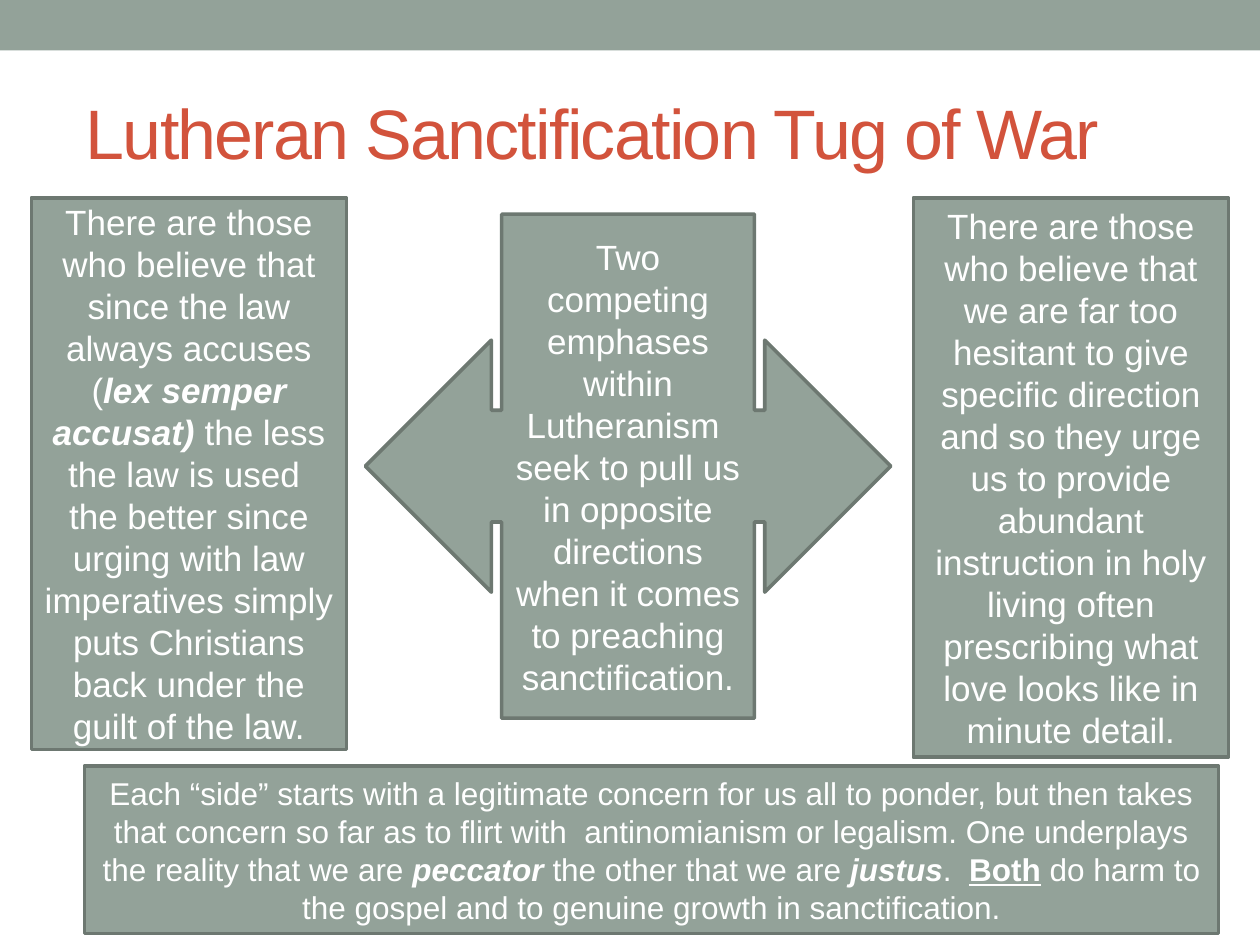
import pptx
import pptx.dml.color
import pptx.enum.shapes
import pptx.enum.text
import pptx.util
from dataclasses import dataclass

Inches = pptx.util.Inches
Pt = pptx.util.Pt
MSO_SHAPE = pptx.enum.shapes.MSO_SHAPE
PP_ALIGN = pptx.enum.text.PP_ALIGN
MSO_ANCHOR = pptx.enum.text.MSO_ANCHOR


def color(value):
    return pptx.dml.color.RGBColor.from_string(value)


@dataclass(frozen=True)
class Theme:
    font: str = "Arial"
    sage = color("93A299")
    outline = color("6D7871")
    white = color("FFFFFF")
    heading = color("D2533C")
    title_size = Pt(40)
    body_size = Pt(20)
    summary_size = Pt(18)
    line_width = Pt(2.08)


theme = Theme()


def add_panel(page, kind, bounds, paragraphs, size):
    """Add an outlined shape; each paragraph is a list of (text, styles) spans,
    where styles is any mix of the letters b, i and u."""
    panel = page.shapes.add_shape(kind, *[Inches(value) for value in bounds])
    panel.shadow.inherit = False
    panel.fill.solid()
    panel.fill.fore_color.rgb = theme.sage
    panel.line.color.rgb = theme.outline
    panel.line.width = theme.line_width
    frame = panel.text_frame
    frame.word_wrap = True
    frame.vertical_anchor = MSO_ANCHOR.MIDDLE
    for index, spans in enumerate(paragraphs):
        para = frame.add_paragraph() if index else frame.paragraphs[0]
        para.alignment = PP_ALIGN.CENTER
        para.font.name = theme.font
        para.font.size = size
        para.font.color.rgb = theme.white
        for text, styles in spans:
            span = para.add_run()
            span.text = text
            if "b" in styles:
                span.font.bold = True
            if "i" in styles:
                span.font.italic = True
            if "u" in styles:
                span.font.underline = True
    return panel


deck = pptx.Presentation()
deck.slide_width = Inches(10)
deck.slide_height = Inches(7.5)
page = deck.slides.add_slide(deck.slide_layouts[5])

# Top band
band = page.shapes.add_shape(MSO_SHAPE.RECTANGLE, 0, 0, deck.slide_width, Inches(0.4))
band.shadow.inherit = False
band.fill.solid()
band.fill.fore_color.rgb = theme.sage
band.line.fill.background()

# Title
title = page.shapes.title
title.left, title.top = Inches(0.58), Inches(0.5)
title.width, title.height = Inches(9), Inches(1.08)
title.text_frame.text = "Lutheran Sanctification Tug of War"
title.text_frame.auto_size = pptx.enum.text.MSO_AUTO_SIZE.NONE
title.text_frame.vertical_anchor = MSO_ANCHOR.MIDDLE
heading = title.text_frame.paragraphs[0]
heading.alignment = PP_ALIGN.LEFT
heading.font.name = theme.font
heading.font.size = theme.title_size
heading.font.color.rgb = theme.heading
heading.runs[0].font._element.set("spc", "-100")

# Central two-way arrow
callout = add_panel(
    page, MSO_SHAPE.LEFT_RIGHT_ARROW_CALLOUT, (2.9, 1.7, 4.17, 4),
    [[("Two competing emphases within Lutheranism  seek to pull us in opposite "
       "directions when it comes to preaching sanctification.", "")]],
    theme.body_size)
for index, value in enumerate((0.222, 0.25, 0.25, 0.481)):
    callout.adjustments[index] = value

# The two sides
less_law = [
    [("There are those who believe that since the law always accuses (", ""),
     ("lex semper accusat)", "bi"),
     (" the less the law is used ", "")],
    [("the better since urging with law imperatives simply puts Christians "
      "back under the guilt of the law.", "")],
]
more_direction = [
    [("There are those who believe that we are far too hesitant to give specific "
      "direction and so they urge us to provide abundant instruction in holy "
      "living often prescribing what love looks like in minute detail.", "")],
]
for left, height, paragraphs in ((0.25, 4.38, less_law), (7.25, 4.44, more_direction)):
    add_panel(page, MSO_SHAPE.RECTANGLE, (left, 1.57, 2.5, height),
              paragraphs, theme.body_size)

# Summary
summary = [
    [("Each “side” starts with a legitimate concern for us all to ponder, but then "
      "takes that concern so far as to flirt with  antinomianism or legalism. "
      "One underplays the reality that we are ", ""),
     ("peccator", "bi"),
     (" the other that we are ", ""),
     ("justus", "bi"),
     (".  ", ""),
     ("Both", "bu"),
     (" do harm to the gospel and to genuine growth in sanctification.", "")],
]
add_panel(page, MSO_SHAPE.RECTANGLE, (0.67, 6.08, 9, 1.33), summary, theme.summary_size)

deck.save("out.pptx")
